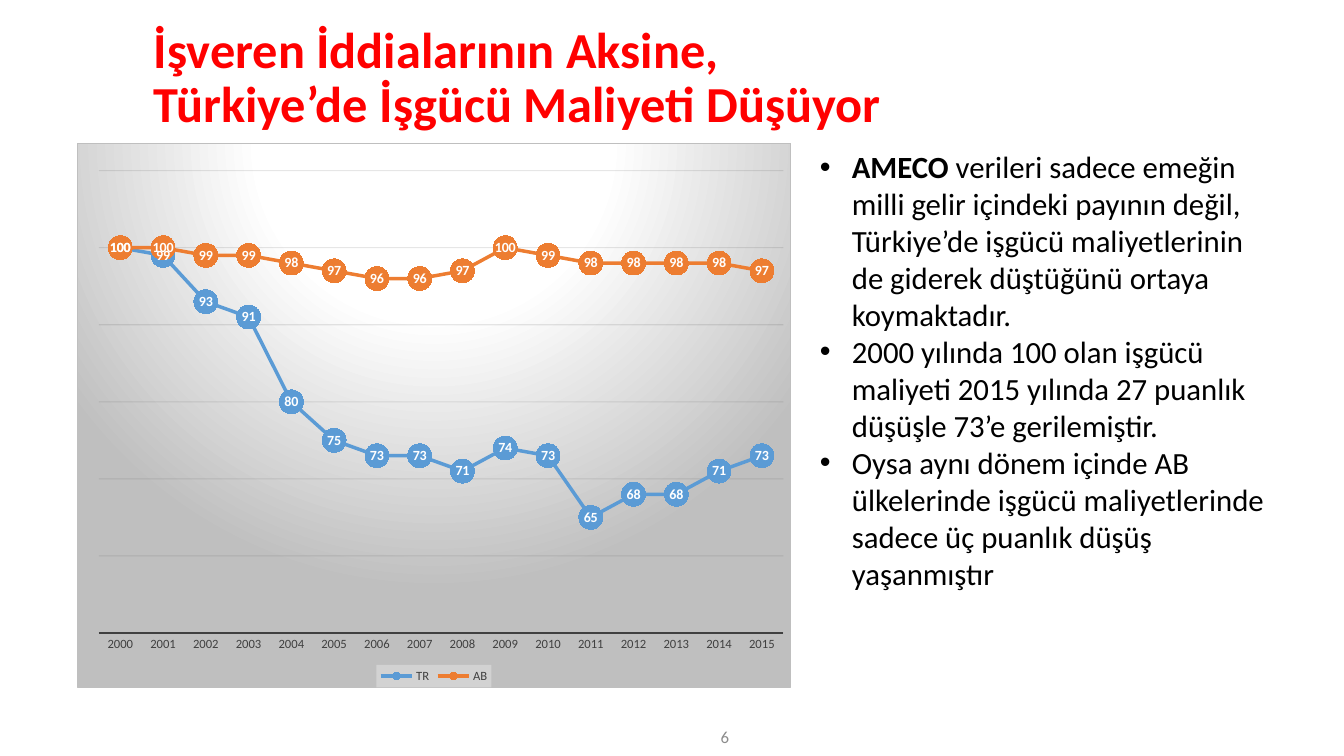
from lxml import etree
from pptx import Presentation
from pptx import util as u
from pptx.chart.data import CategoryChartData
from pptx.dml.color import RGBColor
from pptx.enum import chart as ch
from pptx.enum import text as tx
from pptx.oxml import parse_xml
from pptx.oxml.ns import nsdecls, qn

RED = RGBColor(0xFF, 0x00, 0x00)
BLACK = RGBColor(0x00, 0x00, 0x00)
WHITE = RGBColor(0xFF, 0xFF, 0xFF)
BLUE = RGBColor(0x5B, 0x9B, 0xD5)
ORANGE = RGBColor(0xED, 0x7D, 0x31)
SILVER = RGBColor(0xBF, 0xBF, 0xBF)
AXIS_GRAY = RGBColor(0x40, 0x40, 0x40)
GRID_GRAY = RGBColor(0x0D, 0x0D, 0x0D)
NUMBER_GRAY = RGBColor(0x8C, 0x8C, 0x8C)
FONT = "Calibri"

YEARS = [str(year) for year in range(2000, 2016)]
LABOUR_COSTS = [
    ("TR", BLUE, (100, 99, 93, 91, 80, 75, 73, 73, 71, 74, 73, 65, 68, 68, 71, 73)),
    ("AB", ORANGE, (100, 100, 99, 99, 98, 97, 96, 96, 97, 100, 99, 98, 98, 98, 98, 97)),
]
TITLE = ["İşveren İddialarının Aksine,", "Türkiye’de İşgücü Maliyeti Düşüyor"]
FINDINGS = [
    [("AMECO", True),
     (" verileri sadece emeğin milli gelir içindeki payının değil, Türkiye’de işgücü "
      "maliyetlerinin de giderek düştüğünü ortaya koymaktadır.", False)],
    [("2000 yılında 100 olan işgücü maliyeti 2015 yılında 27 puanlık düşüşle "
      "73’e gerilemiştir.", False)],
    [("Oysa aynı dönem içinde AB ülkelerinde işgücü maliyetlerinde sadece üç puanlık "
      "düşüş yaşanmıştır", False)],
]


def px(length):
    return u.Emu(round(length * 914400 / 100.8))


def style_font(font, size, color, bold=False):
    font.name, font.size, font.bold = FONT, u.Pt(size), bold
    font.color.rgb = color


def add_run(paragraph, words, size=22, color=BLACK, bold=False):
    run = paragraph.add_run()
    run.text = words
    style_font(run.font, size, color, bold)


def add_frame(slide, box, anchor=tx.MSO_ANCHOR.TOP):
    frame = slide.shapes.add_textbox(*map(px, box)).text_frame
    frame.word_wrap = True
    frame.vertical_anchor = anchor
    return frame


def add_title(slide, box):
    heading = add_frame(slide, box, tx.MSO_ANCHOR.MIDDLE).paragraphs[0]
    heading.line_spacing = 0.9
    add_run(heading, TITLE[0], size=36, color=RED, bold=True)
    heading.add_line_break()
    add_run(heading, TITLE[1], size=36, color=RED, bold=True)


def add_bullet(paragraph, indent):
    properties = paragraph._p.get_or_add_pPr()
    properties.set("marL", str(indent))
    properties.set("indent", str(-indent))
    etree.SubElement(properties, qn("a:buFont")).set("typeface", "Arial")
    etree.SubElement(properties, qn("a:buChar")).set("char", "•")


def add_findings(slide, box):
    frame = add_frame(slide, box)
    frame.auto_size = tx.MSO_AUTO_SIZE.SHAPE_TO_FIT_TEXT
    for index, finding in enumerate(FINDINGS):
        paragraph = frame.add_paragraph() if index else frame.paragraphs[0]
        add_bullet(paragraph, px(32))
        for words, bold in finding:
            add_run(paragraph, words, bold=bold)


def add_page_number(slide, box):
    paragraph = add_frame(slide, box, tx.MSO_ANCHOR.MIDDLE).paragraphs[0]
    paragraph.alignment = tx.PP_ALIGN.RIGHT
    add_run(paragraph, "6", size=12, color=NUMBER_GRAY)


def fill_chart_area(chart):
    stops = "".join(
        f'<a:gs pos="{pos}000"><a:srgbClr val="{color}"/></a:gs>'
        for pos, color in ((0, WHITE), (39, WHITE), (100, SILVER)))
    area = parse_xml(
        f'<c:spPr {nsdecls("c", "a")}><a:gradFill><a:gsLst>{stops}</a:gsLst>'
        '<a:path path="circle"><a:fillToRect l="50000" t="-80000" r="50000" b="180000"/>'
        f'</a:path></a:gradFill><a:ln w="9525"><a:solidFill><a:srgbClr val="{SILVER}"/>'
        '</a:solidFill></a:ln></c:spPr>')
    chart._chartSpace.find(qn("c:chart")).addnext(area)


def place_plot(chart, x, y, w, h):
    """Fix the inner plot area, in fractions of the chart."""
    plot_area = chart._chartSpace.find(".//" + qn("c:plotArea"))
    for layout in plot_area.findall(qn("c:layout")):
        plot_area.remove(layout)
    sizes = "".join(f'<c:{key} val="{value}"/>'
                    for key, value in (("x", x), ("y", y), ("w", w), ("h", h)))
    plot_area.insert(0, parse_xml(
        f'<c:layout {nsdecls("c")}><c:manualLayout><c:layoutTarget val="inner"/>'
        f'<c:xMode val="edge"/><c:yMode val="edge"/>{sizes}</c:manualLayout></c:layout>'))


def style_axes(chart):
    years = chart.category_axis
    years.major_tick_mark = ch.XL_TICK_MARK.NONE
    years.format.line.color.rgb = AXIS_GRAY
    years.format.line.width = u.Pt(1.5)
    style_font(years.tick_labels.font, 9, AXIS_GRAY)

    index = chart.value_axis
    index.visible = False
    index.minimum_scale, index.maximum_scale, index.major_unit = 50, 110, 10
    grid = index.major_gridlines.format.line
    grid.color.rgb = GRID_GRAY
    grid.width = u.Pt(0.75)
    for color in index.major_gridlines._xAx.iterfind(
            qn("c:majorGridlines") + "//" + qn("a:srgbClr")):
        etree.SubElement(color, qn("a:alpha")).set("val", "10000")


def style_legend(chart):
    chart.has_legend = True
    legend = chart.legend
    legend.position = ch.XL_LEGEND_POSITION.BOTTOM
    legend.include_in_layout = False
    style_font(legend.font, 9, AXIS_GRAY)
    legend._element.find(qn("c:txPr")).addprevious(parse_xml(
        f'<c:spPr {nsdecls("c", "a")}><a:solidFill><a:srgbClr val="F2F2F2">'
        '<a:alpha val="39000"/></a:srgbClr></a:solidFill></c:spPr>'))


def style_series(series, color):
    series.smooth = False
    series.format.line.color.rgb = color
    series.format.line.width = u.Pt(2.5)
    series.marker.style = ch.XL_MARKER_STYLE.CIRCLE
    series.marker.size = 17
    series.marker.format.fill.solid()
    series.marker.format.fill.fore_color.rgb = color
    series.marker.format.line.fill.background()
    labels = series.data_labels
    labels.show_value = True
    labels.position = ch.XL_LABEL_POSITION.CENTER
    labels.number_format = "#,##0"
    labels.number_format_is_linked = False
    style_font(labels.font, 10, WHITE, bold=True)


def add_cost_chart(slide, box):
    costs = CategoryChartData()
    costs.categories = YEARS
    for region, _, values in LABOUR_COSTS:
        costs.add_series(region, values)
    chart = slide.shapes.add_chart(
        ch.XL_CHART_TYPE.LINE_MARKERS, *map(px, box), costs).chart
    chart.has_title = False
    style_font(chart.font, 10, BLACK)
    fill_chart_area(chart)
    place_plot(chart, 0.03, 0.05, 0.96, 0.85)
    style_axes(chart)
    style_legend(chart)
    plot = chart.plots[0]
    plot.vary_by_categories = False
    for series, (_, color, _) in zip(plot.series, LABOUR_COSTS):
        style_series(series, color)


def main():
    deck = Presentation()
    deck.slide_width, deck.slide_height = px(1344), px(756)
    slide = deck.slides.add_slide(deck.slide_layouts[6])
    add_title(slide, (144, 31, 1165, 96))
    add_cost_chart(slide, (77, 143, 714, 545))
    add_findings(slide, (810, 143, 472, 458))
    add_page_number(slide, (437, 717, 302, 40))
    deck.save("out.pptx")


if __name__ == "__main__":
    main()
